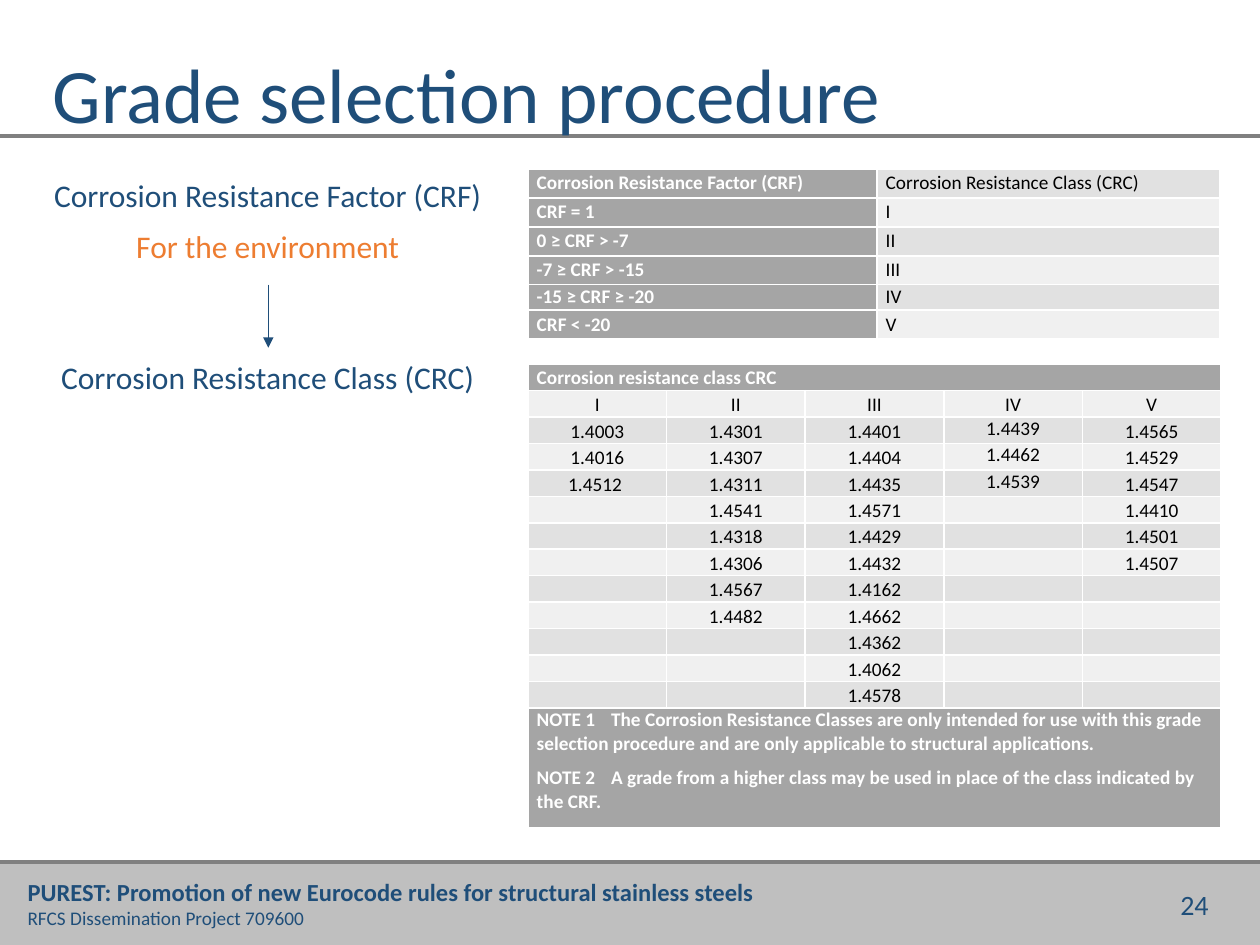
from itertools import zip_longest

from lxml import etree
from pptx import Presentation
from pptx.dml.color import RGBColor
from pptx.enum import shapes, text
from pptx.oxml import ns
from pptx.util import Inches, Pt

NAVY = RGBColor(0x1F, 0x4E, 0x79)
ORANGE = RGBColor(0xED, 0x7D, 0x31)
WHITE = RGBColor(0xFF, 0xFF, 0xFF)
BLACK = RGBColor(0, 0, 0)
RULE = RGBColor(0x80, 0x80, 0x80)
FOOT = RGBColor(0xBF, 0xBF, 0xBF)
HEAD = RGBColor(0xA5, 0xA5, 0xA5)
BANDS = (RGBColor(0xE1, 0xE1, 0xE1), RGBColor(0xF0, 0xF0, 0xF0))

LEFT, CENTER, RIGHT = (text.PP_ALIGN.LEFT, text.PP_ALIGN.CENTER,
                       text.PP_ALIGN.RIGHT)
TOP, MIDDLE, BOTTOM = (text.MSO_ANCHOR.TOP, text.MSO_ANCHOR.MIDDLE,
                       text.MSO_ANCHOR.BOTTOM)

FACTORS = [
    ("Corrosion Resistance Factor (CRF)", "Corrosion Resistance Class (CRC)"),
    ("CRF = 1", "I"),
    ("0 ≥ CRF > -7", "II"),
    ("-7 ≥ CRF > -15", "III"),
    ("-15 ≥ CRF ≥ -20", "IV"),
    ("CRF < -20", "V"),
]
GRADES = [
    ["I", "1.4003", "1.4016", "1.4512 "],
    ["II", "1.4301", "1.4307", "1.4311", "1.4541", "1.4318", "1.4306",
     "1.4567", "1.4482"],
    ["III", "1.4401", "1.4404", "1.4435", "1.4571", "1.4429", "1.4432",
     "1.4162", "1.4662", "1.4362", "1.4062", "1.4578"],
    ["IV", "1.4439", "1.4462", "1.4539"],
    ["V", "1.4565", "1.4529", "1.4547", "1.4410", "1.4501", "1.4507"],
]
NOTES = (
    "NOTE 1\tThe Corrosion Resistance Classes are only intended for use with "
    "this grade selection procedure and are only applicable to structural "
    "applications.\n"
    "NOTE 2\tA grade from a higher class may be used in place of the class "
    "indicated by the CRF."
)


def node(parent, tag, **attrs):
    return etree.SubElement(parent, ns.qn(tag), **attrs)


def style(para, size, color, bold=False):
    for run in para.runs:
        font = run.font
        font.name, font.size, font.bold = "Calibri", Pt(size), bold
        font.color.rgb = color


def add_text(slide, box, lines, align=LEFT, anchor=TOP, wrap=True, lead=None):
    """Add a text box; each line is (words, size, colour, bold, space before)."""
    frame = slide.shapes.add_textbox(*map(Inches, box)).text_frame
    frame.word_wrap = wrap
    frame.vertical_anchor = anchor
    frame.text = "\n".join(line[0] for line in lines)
    for para, (_, size, color, bold, gap) in zip(frame.paragraphs, lines):
        para.alignment = align
        para.space_before = Pt(gap)
        if lead:
            para.line_spacing = lead
        style(para, size, color, bold)


def add_line(slide, start, end, color, width, arrow=False):
    line = slide.shapes.add_connector(
        shapes.MSO_CONNECTOR.STRAIGHT, *map(Inches, start + end))
    line.line.color.rgb = color
    line.line.width = Pt(width)
    if arrow:
        node(line.line._get_or_add_ln(), "a:tailEnd", type="triangle")
    node(line._element.spPr, "a:effectLst")


def add_band(slide, box, color):
    band = slide.shapes.add_shape(
        shapes.MSO_SHAPE.RECTANGLE, *map(Inches, box))
    band.shadow.inherit = False
    band.fill.solid()
    band.fill.fore_color.rgb = band.line.color.rgb = color
    band.line.width = Pt(1)


def add_grid(slide, spot, cols, rows):
    size = Inches(sum(cols)), Inches(sum(rows))
    grid = slide.shapes.add_table(
        len(rows), len(cols), *map(Inches, spot), *size).table
    for col, width in zip(grid.columns, cols):
        col.width = Inches(width)
    for row, height in zip(grid.rows, rows):
        row.height = Inches(height)
    return grid


def set_cell(cell, words, fill, color=BLACK, bold=False, align=LEFT,
             anchor=MIDDLE):
    cell.margin_left = cell.margin_right = Inches(0.07)
    cell.margin_top = cell.margin_bottom = 0
    cell.vertical_anchor = anchor
    props = cell._tc.get_or_add_tcPr()
    for side in "LRTB":
        edge = node(props, f"a:ln{side}", w=str(Pt(1)))
        node(node(edge, "a:solidFill"), "a:srgbClr", val=str(WHITE))
    cell.fill.solid()
    cell.fill.fore_color.rgb = fill
    cell.text_frame.text = words
    for para in cell.text_frame.paragraphs:
        para.alignment = align
        para.space_before = para.space_after = Pt(3)
        tabs = node(para._p.get_or_add_pPr(), "a:tabLst")
        for stop in (0.2, 0.59):
            node(tabs, "a:tab", pos=str(Inches(stop)), algn="l")
        style(para, 11, color, bold)
        if not words:
            node(para._p, "a:endParaRPr", sz="1100")


def add_factors(slide):
    grid = add_grid(slide, (4.19, 1.34), (2.77, 2.72),
                    [0.23] * 4 + [0.2, 0.23])
    for i, (factor, grade) in enumerate(FACTORS):
        set_cell(grid.cell(i, 0), factor, HEAD, WHITE, True)
        set_cell(grid.cell(i, 1), grade, BANDS[i % 2])


def add_grades(slide):
    grid = add_grid(slide, (4.19, 2.89), [1.1] * 5, [0.21] * 13 + [0.95])
    last = len(grid.rows) - 1
    for i, words, anchor in ((0, "Corrosion resistance class CRC", MIDDLE),
                             (last, NOTES, TOP)):
        grid.cell(i, 0).merge(grid.cell(i, 4))
        set_cell(grid.cell(i, 0), words, HEAD, WHITE, True, anchor=anchor)
    for i, row in enumerate(zip_longest(*GRADES, fillvalue=""), 1):
        for j, grade in enumerate(row):
            anchor = TOP if j == 3 and i > 1 else BOTTOM
            set_cell(grid.cell(i, j), grade, BANDS[i % 2], align=CENTER,
                     anchor=anchor)


def add_footer(slide):
    add_band(slide, (0, 6.84, 10, 0.66), FOOT)
    add_line(slide, (0, 6.84), (10, 6.84), RULE, 2)
    add_text(slide, (0.12, 6.91, 6.01, 0.52), [
        ("PUREST: Promotion of new Eurocode rules for structural stainless "
         "steels", 14, NAVY, True, 0),
        ("RFCS Dissemination Project 709600", 11, NAVY, False, 0),
    ], wrap=False)
    add_text(slide, (7.44, 6.98, 2.25, 0.4), [("24", 16, NAVY, False, 0)],
             RIGHT, MIDDLE)


def main():
    deck = Presentation()
    deck.slide_width, deck.slide_height = Inches(10), Inches(7.5)
    slide = deck.slides.add_slide(deck.slide_layouts[6])
    add_footer(slide)
    add_line(slide, (0, 1.08), (10, 1.08), RULE, 2)
    add_text(slide, (0.32, 0.4, 9.35, 0.68),
             [("Grade selection procedure", 44, NAVY, False, 0)], lead=0.9)
    add_factors(slide)
    add_grades(slide)
    add_text(slide, (0.32, 1.38, 3.61, 5.34), [
        ("Corrosion Resistance Factor (CRF)", 18, NAVY, False, 10),
        ("For the environment", 18, ORANGE, False, 10),
        ("Corrosion Resistance Class (CRC)", 18, NAVY, False, 55),
    ], CENTER, lead=0.9)
    add_line(slide, (2.13, 2.26), (2.13, 2.76), NAVY, 0.5, arrow=True)
    deck.save("out.pptx")


if __name__ == "__main__":
    main()
